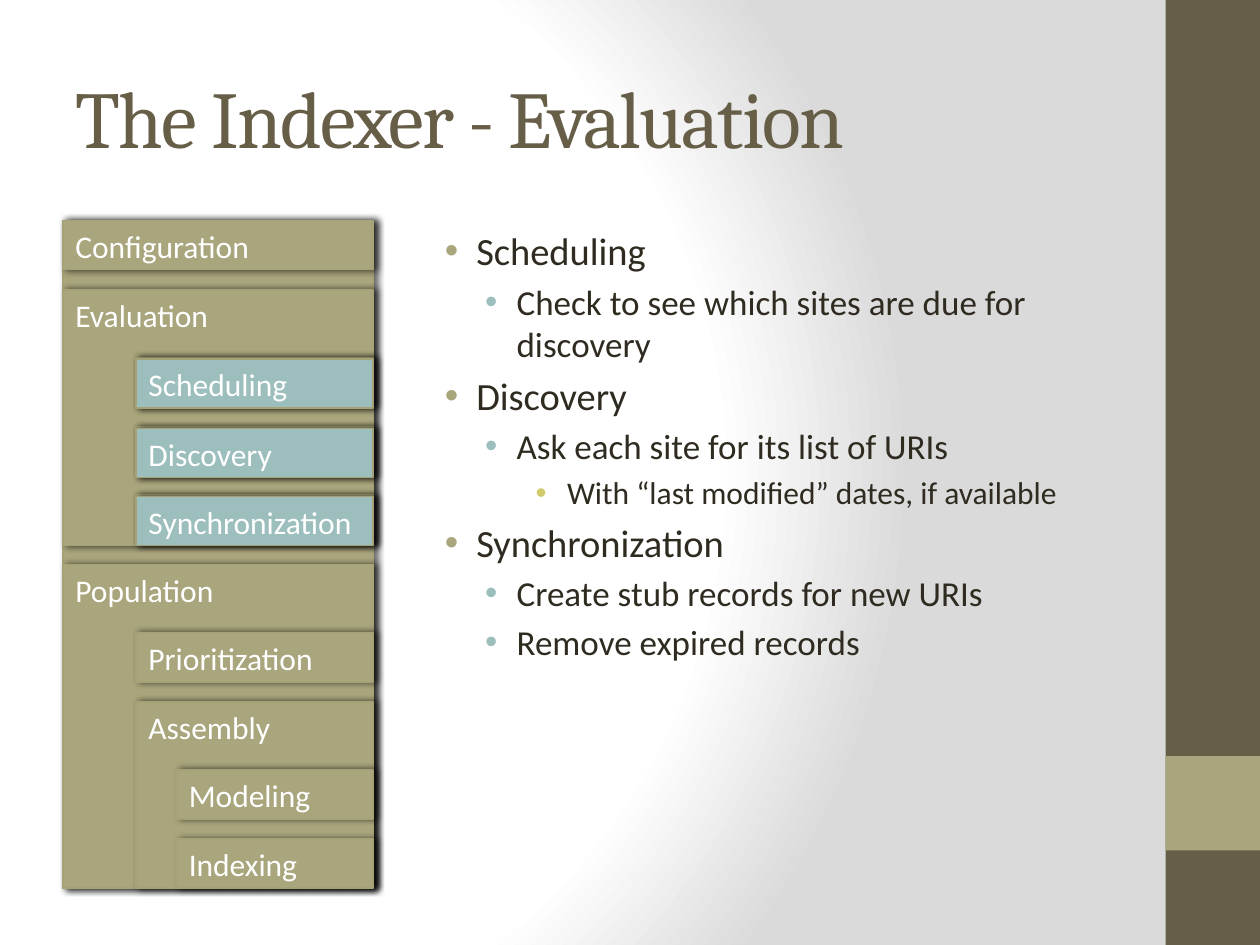
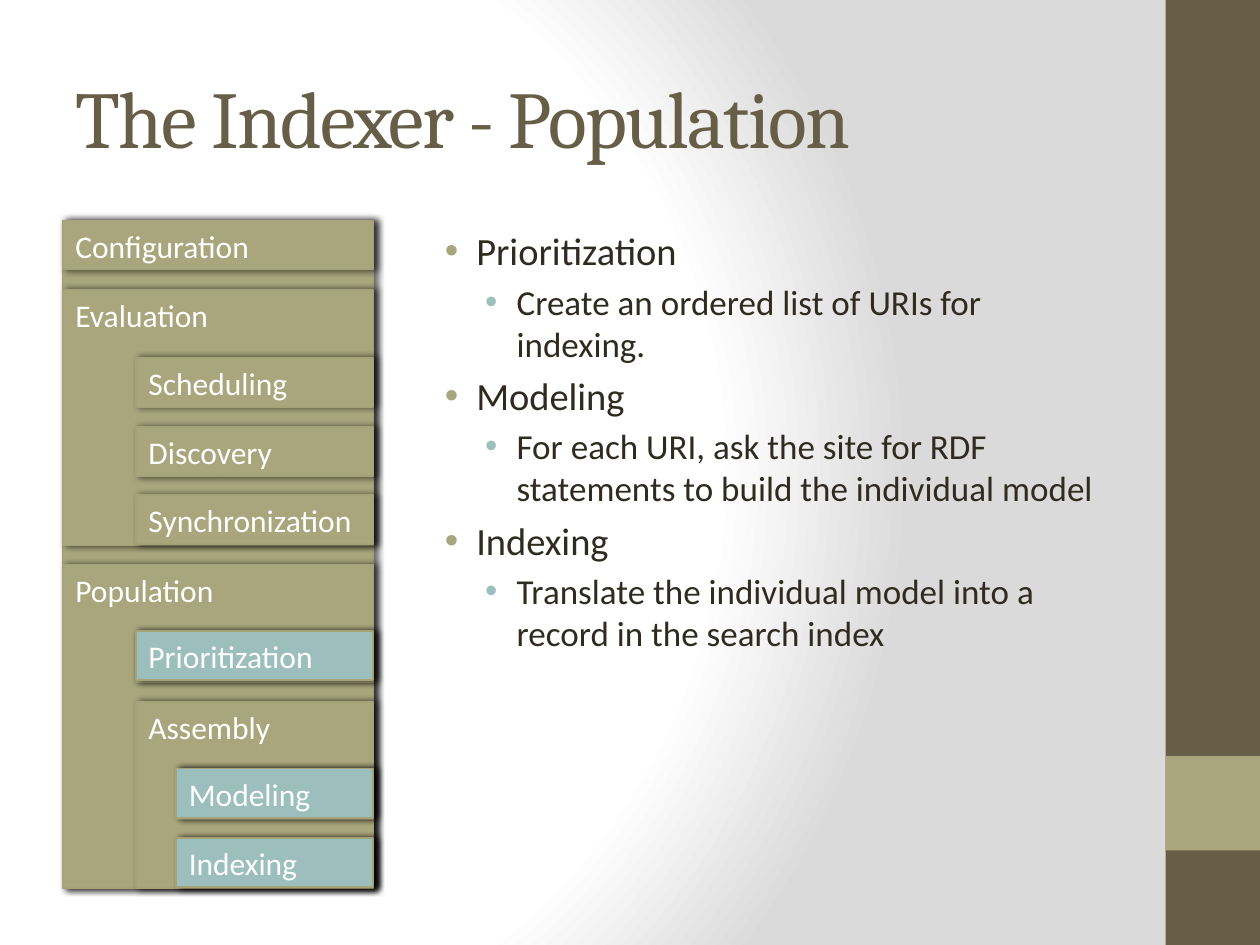
from dataclasses import dataclass

from pptx import Presentation
from pptx.dml.color import RGBColor
from pptx.enum.shapes import MSO_SHAPE
from pptx.enum.text import MSO_ANCHOR as Anchor, MSO_AUTO_SIZE as AutoSize, PP_ALIGN as Align
from pptx.oxml import parse_xml
from pptx.oxml.ns import nsdecls, qn
from pptx.util import Pt

PX = 9144


@dataclass(frozen=True)
class Theme:
    """Colours, fonts and type sizes shared by the slides."""
    brown: str = "675E47"
    olive: str = "A9A57C"
    olive_edge: str = "A6A278"
    teal: str = "9CBEBD"
    ink: str = "2F2B20"
    white: str = "FFFFFF"
    grey: str = "DADADA"
    heading: str = "Cambria"
    text: str = "Calibri"
    title_size: int = 46
    stage_size: int = 18
    level_sizes: tuple = (22, 20, 18)
    level_bullets: tuple = ("A9A57C", "9CBEBD", "D2CB6C")
    level_indents: tuple = (38, 70, 110)


THEME = Theme()
STAGE_TOP, STAGE_HEIGHT, STAGE_PITCH, STAGE_RIGHT = 175, 39, 54.55, 296
STAGE_LEFTS = (50, 108, 140)

# Each stage: name, depth, last row that it encloses.
STAGES = [
    ("Configuration", 0, 0),
    ("Evaluation", 0, 4),
    ("Scheduling", 1, 2),
    ("Discovery", 1, 3),
    ("Synchronization", 1, 4),
    ("Population", 0, 9),
    ("Prioritization", 1, 6),
    ("Assembly", 1, 9),
    ("Modeling", 2, 8),
    ("Indexing", 2, 9),
]

SLIDES = [
    ("The Indexer - Evaluation", ("Scheduling", "Discovery", "Synchronization"), 1, [
        (0, "Scheduling"),
        (1, "Check to see which sites are due for discovery"),
        (0, "Discovery"),
        (1, "Ask each site for its list of URIs"),
        (2, "With “last modified” dates, if available"),
        (0, "Synchronization"),
        (1, "Create stub records for new URIs"),
        (1, "Remove expired records"),
    ]),
    ("The Indexer - Population", ("Prioritization", "Modeling", "Indexing"), -1, [
        (0, "Prioritization"),
        (1, "Create an ordered list of URIs for indexing."),
        (0, "Modeling"),
        (1, "For each URI, ask the site for RDF statements to build the individual model"),
        (0, "Indexing"),
        (1, "Translate the individual model into a record in the search index"),
    ]),
]


def apply(target, formats):
    """Set every attribute named in a dict of format values."""
    for name, value in formats.items():
        setattr(target, name, value)


def place(placeholder, left, top, width, height):
    """Move a placeholder to a box given in px."""
    apply(placeholder, {"left": left * PX, "top": top * PX,
                        "width": width * PX, "height": height * PX})


def set_font(font, face, size, colour):
    """Give a font its face, size and colour."""
    apply(font, {"name": face, "size": Pt(size)})
    font.color.rgb = RGBColor.from_string(colour)


def paint_background(master):
    """Fill the master with a radial fade from white to grey."""
    stops = "".join(
        f'<a:gs pos="{share * 1000}"><a:srgbClr val="{colour}"/></a:gs>'
        for share, colour in ((0, THEME.white), (75, THEME.white), (100, THEME.grey)))
    master.background.fill.solid()
    backdrop = master.element.find(".//" + qn("p:bgPr"))
    backdrop.replace(backdrop[0], parse_xml(
        f'<a:gradFill {nsdecls("a")} rotWithShape="1"><a:gsLst>{stops}</a:gsLst>'
        '<a:path path="circle"><a:fillToRect l="20000" t="50000" r="100000" b="50000"/>'
        '</a:path></a:gradFill>'))


def add_block(slide, left, top, width, height, fill):
    """Add a plain rectangle without outline or shadow."""
    block = slide.shapes.add_shape(
        MSO_SHAPE.RECTANGLE, left * PX, top * PX, width * PX, height * PX)
    block.shadow.inherit = False
    block.fill.solid()
    block.fill.fore_color.rgb = RGBColor.from_string(fill)
    block.line.fill.background()
    return block


def add_raised_block(slide, left, top, width, height, fill):
    """Add a rectangle with a thin edge and a shadow to the right."""
    block = add_block(slide, left, top, width, height, fill)
    block.line.color.rgb = RGBColor.from_string(THEME.olive_edge)
    block.line.width = Pt(1)
    block.element.spPr.find(qn("a:effectLst")).append(parse_xml(
        f'<a:outerShdw {nsdecls("a")} blurRad="{Pt(4)}" dist="{Pt(2)}" dir="0" '
        'rotWithShape="0"><a:srgbClr val="000000"><a:alpha val="60000"/></a:srgbClr>'
        '</a:outerShdw>'))
    return block


def add_stage(slide, row, fill, shift=0):
    """Add the indexer stage that starts at the given row."""
    name, depth, last_row = STAGES[row]
    left = STAGE_LEFTS[depth]
    top = round(STAGE_TOP + row * STAGE_PITCH) + shift
    height = round((last_row - row) * STAGE_PITCH) + STAGE_HEIGHT
    stage = add_raised_block(slide, left, top, STAGE_RIGHT - left, height, fill)
    apply(stage.text_frame, {"word_wrap": True, "vertical_anchor": Anchor.TOP, "text": name})
    label = stage.text_frame.paragraphs[0]
    label.alignment = Align.LEFT
    set_font(label.font, THEME.text, THEME.stage_size, THEME.white)
    return stage


def furnish_layout(layout, workbench):
    """Place the layout's placeholders and give it the side band and stage diagram."""
    title, body = layout.placeholders[0], layout.placeholders[1]
    place(title, 50, 30, 833, 125)
    place(body, 330, 175, 553, 525)
    fixtures = [
        add_block(workbench, 925, 0, 75, 750, THEME.brown),
        add_block(workbench, 925, 600, 75, 75, THEME.olive),
        add_raised_block(workbench, 50, 175, 246, 530, THEME.olive),
    ]
    fixtures += [add_stage(workbench, row, THEME.olive) for row in range(len(STAGES))]
    for number, fixture in enumerate(fixtures, start=101):
        fixture.element.nvSpPr.cNvPr.set("id", str(number))
        layout.shapes.element.append(fixture.element)


def write_title(title, words):
    """Write the slide title in the heading style."""
    apply(title.text_frame, {"text": words, "vertical_anchor": Anchor.MIDDLE,
                             "word_wrap": True, "auto_size": AutoSize.NONE})
    heading = title.text_frame.paragraphs[0]
    heading.alignment = Align.LEFT
    run = heading.runs[0]
    set_font(run.font, THEME.heading, THEME.title_size, THEME.brown)
    run.font.element.set("spc", "-100") if hasattr(run.font, "element") else \
        heading._p.find(".//" + qn("a:rPr")).set("spc", "-100")


def write_outline(body, items):
    """Write the bulleted outline, one paragraph for each level and text."""
    outline = body.text_frame
    apply(outline, {"text": "\n".join(words for _, words in items),
                    "word_wrap": True, "auto_size": AutoSize.NONE})
    for point, (level, _) in zip(outline.paragraphs, items):
        point.level = level
        set_font(point.runs[0].font, THEME.text, THEME.level_sizes[level], THEME.ink)
        properties = point._p.get_or_add_pPr()
        properties.set("marL", str(THEME.level_indents[level] * PX))
        properties.set("indent", str(-25 * PX))
        for bullet in (f'<a:buClr {nsdecls("a")}><a:srgbClr val="{THEME.level_bullets[level]}"/></a:buClr>',
                       f'<a:buFont {nsdecls("a")} typeface="Arial"/>',
                       f'<a:buChar {nsdecls("a")} char="•"/>'):
            properties.append(parse_xml(bullet))


def main():
    """Build both indexer slides and save them."""
    deck = Presentation()
    apply(deck, {"slide_width": 1000 * PX, "slide_height": 750 * PX})
    layout = deck.slide_layouts[1]
    paint_background(deck.slide_master)
    rows = {name: row for row, (name, _, _) in enumerate(STAGES)}
    slides = [deck.slides.add_slide(layout) for _ in SLIDES]
    furnish_layout(layout, slides[0])
    for slide, (heading, active_stages, shift, items) in zip(slides, SLIDES):
        write_title(slide.shapes.title, heading)
        write_outline(slide.placeholders[1], items)
        for name in active_stages:
            add_stage(slide, rows[name], THEME.teal, shift)
    deck.save("out.pptx")


if __name__ == "__main__":
    main()
